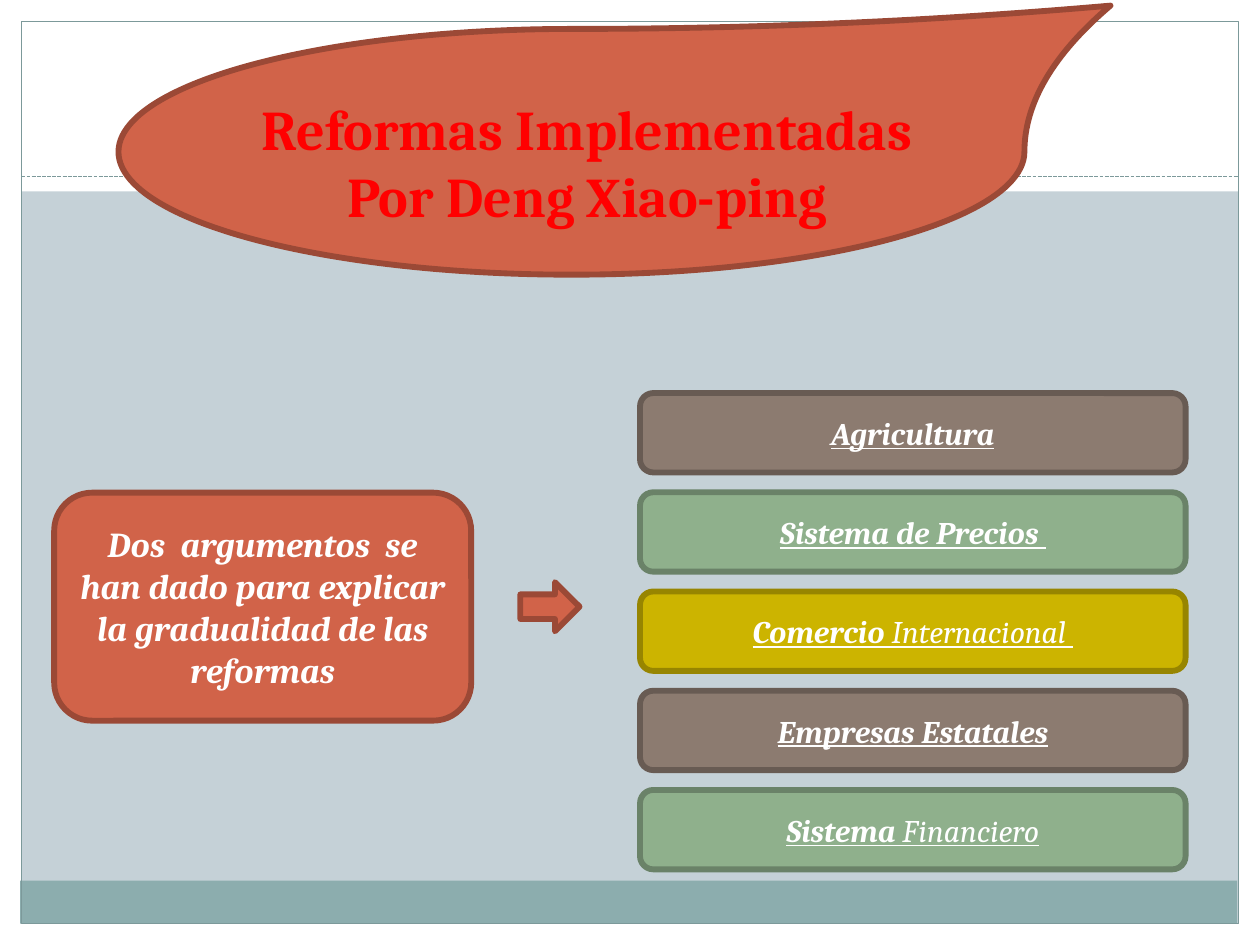
from lxml.etree import SubElement
from pptx import Presentation
from pptx.dml.color import RGBColor
from pptx.enum.dml import MSO_LINE
from pptx.enum.shapes import MSO_CONNECTOR, MSO_SHAPE
from pptx.enum.text import MSO_ANCHOR, MSO_AUTO_SIZE, PP_ALIGN
from pptx.oxml.ns import qn
from pptx.util import Inches, Pt

COLORS = {
    "back": "C5D1D7", "white": "FFFFFF", "teal": "8CADAE", "rule": "7C999A",
    "red": "D16349", "red edge": "9B4936", "title": "FF0000",
    "brown": "8C7B70", "brown edge": "685B53",
    "green": "8FB08C", "green edge": "6A8268",
    "gold": "CCB400", "gold edge": "978500",
}


def color(name):
    return RGBColor.from_string(COLORS[name])


def add_box(kind, place, fill=None, edge=None, width=3.35):
    """Add a flat shape; place is left, top, width, height in inches."""
    box = slide.shapes.add_shape(kind, *map(Inches, place))
    box.shadow.inherit = False
    if fill:
        box.fill.solid()
        box.fill.fore_color.rgb = color(fill)
    else:
        box.fill.background()
    if edge:
        box.line.color.rgb = color(edge)
        box.line.width = Pt(width)
    else:
        box.line.fill.background()
    return box


prs = Presentation()
prs.slide_width, prs.slide_height = Inches(10), Inches(7.5)
slide = prs.slides.add_slide(prs.slide_layouts[5])
slide.background.fill.solid()
slide.background.fill.fore_color.rgb = color("back")

# Page frame
for place in [(0, 7.33, 10, 0.17), (0, 0, 10, 1.52),
              (0, 0, 0.17, 7.5), (9.83, 0, 0.17, 7.5)]:
    add_box(MSO_SHAPE.RECTANGLE, place, "white")
add_box(MSO_SHAPE.RECTANGLE, (0.16, 6.99, 9.66, 0.34), "teal")
add_box(MSO_SHAPE.RECTANGLE, (0.17, 0.17, 9.66, 7.16), edge="rule", width=0.75)
rule = slide.shapes.add_connector(
    MSO_CONNECTOR.STRAIGHT, Inches(0.17), Inches(1.4), Inches(9.83), Inches(1.4))
rule.line.color.rgb = color("rule")
rule.line.width = Pt(0.75)
rule.line.dash_style = MSO_LINE.SQUARE_DOT
SubElement(rule.element.spPr, qn("a:effectLst"))

# Title on its drop
drop = add_box(MSO_SHAPE.TEAR, (0.94, 0.23, 7.19, 1.95), "red", "red edge")
drop.adjustments[0] = 1.19
title = slide.shapes.title
drop.element.addnext(title.element)
title.left, title.top = Inches(1.25), Inches(0.7)
title.width, title.height = Inches(6.82), Inches(1.18)
frame = title.text_frame
frame.text = "Reformas Implementadas\nPor Deng Xiao-ping"
frame.word_wrap = True
frame.auto_size = MSO_AUTO_SIZE.SHAPE_TO_FIT_TEXT
frame.vertical_anchor = MSO_ANCHOR.TOP
for para in frame.paragraphs:
    para.alignment = PP_ALIGN.CENTER
    para.font.name, para.font.size, para.font.bold = "Cambria", Pt(32), True
    para.font.color.rgb = color("title")

add_box(MSO_SHAPE.RIGHT_ARROW, (4.13, 4.62, 0.47, 0.39), "red", "red edge")

# Argument on the left, reforms stacked on the right: bold text, plain text, fill
cards = [((0.43, 3.91, 3.31, 1.81), 20, False, "red",
          "Dos  argumentos  se han dado para explicar la gradualidad de las reformas", "")]
reforms = [
    ("Agricultura", "", "brown"),
    ("Sistema de Precios ", "", "green"),
    ("Comercio", " Internacional ", "gold"),
    ("Empresas Estatales", "", "brown"),
    ("Sistema", " Financiero", "green"),
]
for row, (bold, plain, fill) in enumerate(reforms):
    place = (5.08, 3.12 + row * 0.7875, 4.33, 0.63)
    cards.append((place, 18, True, fill, bold, plain))

for place, size, under, fill, bold, plain in cards:
    card = add_box(MSO_SHAPE.ROUNDED_RECTANGLE, place, fill, fill + " edge")
    frame = card.text_frame
    frame.word_wrap = True
    frame.vertical_anchor = MSO_ANCHOR.MIDDLE
    para = frame.paragraphs[0]
    para.alignment = PP_ALIGN.CENTER
    font = para.font
    font.name, font.size = "Cambria", Pt(size)
    font.italic, font.underline = True, under
    font.color.rgb = color("white")
    for text, strong in [(bold, True), (plain, False)]:
        if text:
            run = para.add_run()
            run.text = text
            run.font.bold = strong

prs.save("out.pptx")
